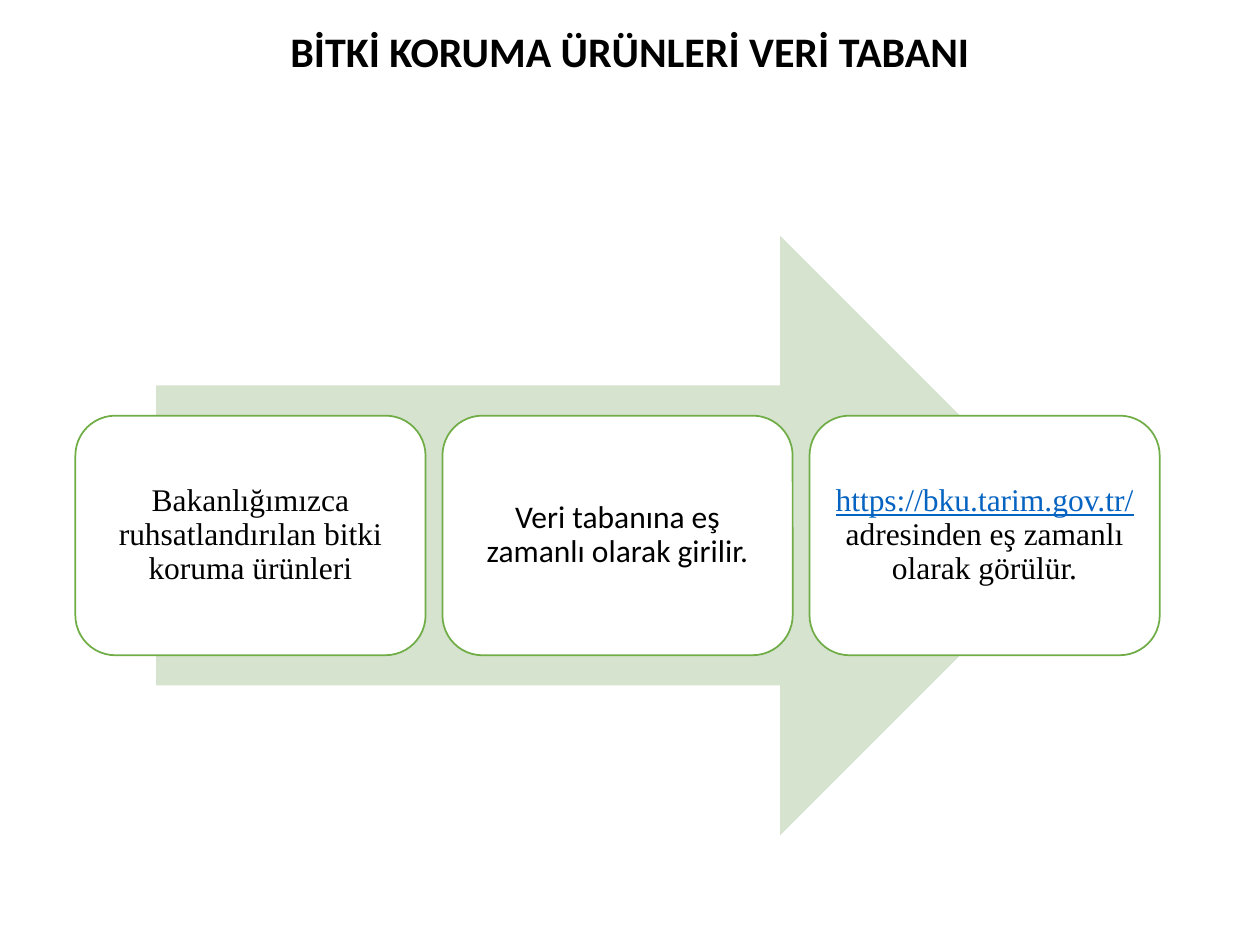
"""Builds the plant protection product database slide: a title and three steps on an arrow."""
from pptx import Presentation
from pptx import util as u
from pptx.dml.color import RGBColor
from pptx.enum import shapes, text

TITLE = "BİTKİ KORUMA ÜRÜNLERİ VERİ TABANI"
STEPS = [
    ("Times New Roman", [("Bakanlığımızca ruhsatlandırılan bitki koruma ürünleri", "ink")]),
    ("Calibri", [("Veri tabanına eş zamanlı olarak girilir.", "ink")]),
    ("Times New Roman", [("https://bku.tarim.gov.tr/", "link"),
                         (" adresinden eş zamanlı olarak görülür.", "ink")]),
]
COLOURS = {"arrow": "D5E3CF", "step": "FFFFFF", "border": "70AD47",
           "ink": "000000", "link": "0563C1"}
ARROW = {"left": 3.15, "top": 4.75, "width": 18.62, "height": 12.09}
STEP = {"left": 1.52, "width": 7.06, "height": 4.83, "pitch": 7.4}
STEP_INSET = 0.18


def colour(key):
    return RGBColor.from_string(COLOURS[key])


def apply(target, values):
    for name, value in values.items():
        setattr(target, name, value)


def add_block(slide, kind, fill, left, top, width, height):
    block = slide.shapes.add_shape(kind, *map(u.Cm, (left, top, width, height)))
    block.shadow.inherit = False
    block.fill.solid()
    block.fill.fore_color.rgb = colour(fill)
    block.line.fill.background()
    return block


def write(frame, runs, font):
    apply(frame, {"word_wrap": True, "vertical_anchor": text.MSO_ANCHOR.MIDDLE})
    paragraph = frame.paragraphs[0]
    apply(paragraph, {"alignment": text.PP_ALIGN.CENTER, "line_spacing": 0.9})
    for words, ink in runs:
        run = paragraph.add_run()
        run.text = words
        apply(run.font, {**font, "underline": ink == "link"})
        run.font.color.rgb = colour(ink)


def main():
    deck = Presentation()
    apply(deck, {"slide_width": u.Cm(25.4), "slide_height": u.Cm(19.05)})
    slide = deck.slides.add_slide(deck.slide_layouts[6])

    add_block(slide, shapes.MSO_SHAPE.RIGHT_ARROW, "arrow", **ARROW)
    step_top = ARROW["top"] + (ARROW["height"] - STEP["height"]) / 2
    for index, (typeface, runs) in enumerate(STEPS):
        step = add_block(slide, shapes.MSO_SHAPE.ROUNDED_RECTANGLE, "step",
                         STEP["left"] + index * STEP["pitch"], step_top,
                         STEP["width"], STEP["height"])
        step.line.color.rgb = colour("border")
        step.line.width = u.Pt(1)
        apply(step.text_frame, {f"margin_{side}": u.Cm(STEP_INSET)
                                for side in ("left", "top", "right", "bottom")})
        write(step.text_frame, runs, {"name": typeface, "size": u.Pt(18)})

    title = slide.shapes.add_textbox(0, u.Cm(0.33), deck.slide_width, u.Cm(1.5))
    write(title.text_frame, [(TITLE, "ink")],
          {"name": "Calibri", "size": u.Pt(24), "bold": True})
    deck.save("out.pptx")


if __name__ == "__main__":
    main()
